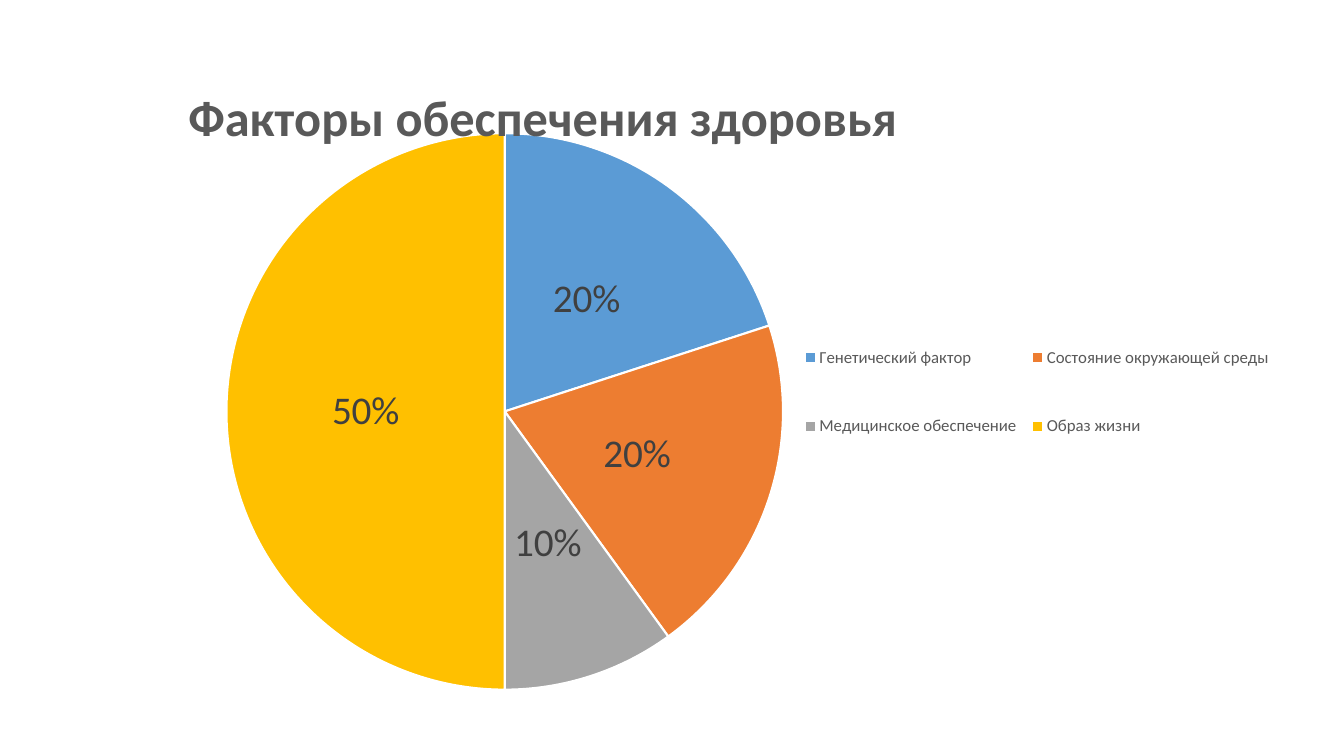
"""Build a slide with a pie chart of the factors that secure health."""
from typing import NamedTuple

from lxml.etree import SubElement
from pptx import Presentation
from pptx.chart.data import CategoryChartData
from pptx.dml.color import RGBColor
from pptx.enum.chart import XL_CHART_TYPE as ChartType
from pptx.enum.chart import XL_LABEL_POSITION as LabelPos
from pptx.enum.chart import XL_LEGEND_POSITION as LegendPos
from pptx.oxml.ns import qn
from pptx.util import Inches, Pt


class Factor(NamedTuple):
    name: str
    share: int
    color: str


class Area(NamedTuple):
    x: float
    y: float
    w: float | None = None
    h: float | None = None


TITLE = "Факторы обеспечения здоровья"
FACTORS = [
    Factor("Генетический фактор", 20, "5B9BD5"),
    Factor("Состояние окружающей среды", 20, "ED7D31"),
    Factor("Медицинское обеспечение", 10, "A5A5A5"),
    Factor("Образ жизни", 50, "FFC000"),
]
TITLE_AREA = Area(0.16, 0.05)
PIE_AREA = Area(0.196, 0.119, 0.425, 0.881)
LEGEND_AREA = Area(0.63, 0.39, 0.37, 0.28)


def rgb(color: str) -> RGBColor:
    return RGBColor.from_string(color)


def set_font(font, size: float, color: str, bold: bool = False) -> None:
    font.name = "Calibri"
    font.size = Pt(size)
    font.bold = bold
    font.color.rgb = rgb(color)


def place(element, index: int, area: Area, inner: bool = False) -> None:
    for old in element.findall(qn("c:layout")):
        element.remove(old)
    layout = SubElement(element, qn("c:layout"))
    element.insert(index, layout)
    manual = SubElement(layout, qn("c:manualLayout"))
    values = {"layoutTarget": "inner"} if inner else {}
    values |= {"xMode": "edge", "yMode": "edge"} | area._asdict()
    for tag, value in values.items():
        if value is not None:
            SubElement(manual, qn(f"c:{tag}")).set("val", str(value))


def add_title(chart) -> None:
    chart.has_title = True
    tf = chart.chart_title.text_frame
    tf.text = TITLE
    set_font(tf.paragraphs[0].font, 36, "595959", bold=True)
    place(chart.chart_title._element, 1, TITLE_AREA)


def add_legend(chart) -> None:
    chart.has_legend = True
    legend = chart.legend
    legend.position = LegendPos.RIGHT
    legend.include_in_layout = False
    set_font(legend.font, 12, "595959")
    place(legend._element, 1, LEGEND_AREA)


def style_pie(chart) -> None:
    plot = chart.plots[0]
    plot.vary_by_categories = True
    for i, factor in enumerate(FACTORS):
        fmt = plot.series[0].points[i].format
        fmt.fill.solid()
        fmt.fill.fore_color.rgb = rgb(factor.color)
        fmt.line.color.rgb = rgb("FFFFFF")
        fmt.line.width = Pt(1.5)
    plot.has_data_labels = True
    labels = plot.data_labels
    labels.show_percentage = True
    labels.show_value = False
    labels.number_format = "0%"
    labels.number_format_is_linked = False
    labels.position = LabelPos.CENTER
    set_font(labels.font, 28, "404040")
    place(chart._chartSpace.chart.plotArea, 0, PIE_AREA, inner=True)


def main() -> None:
    prs = Presentation()
    prs.slide_width, prs.slide_height = Inches(13.33), Inches(7.5)
    s = prs.slides.add_slide(prs.slide_layouts[6])
    data = CategoryChartData()
    data.categories = [f.name for f in FACTORS]
    data.add_series(TITLE, [f.share for f in FACTORS])
    chart = s.shapes.add_chart(
        ChartType.PIE, Inches(-0.3), Inches(0.39), Inches(12.99), Inches(6.6), data
    ).chart
    set_font(chart.font, 10, "000000")
    add_title(chart)
    add_legend(chart)
    style_pie(chart)
    prs.save("out.pptx")


if __name__ == "__main__":
    main()
